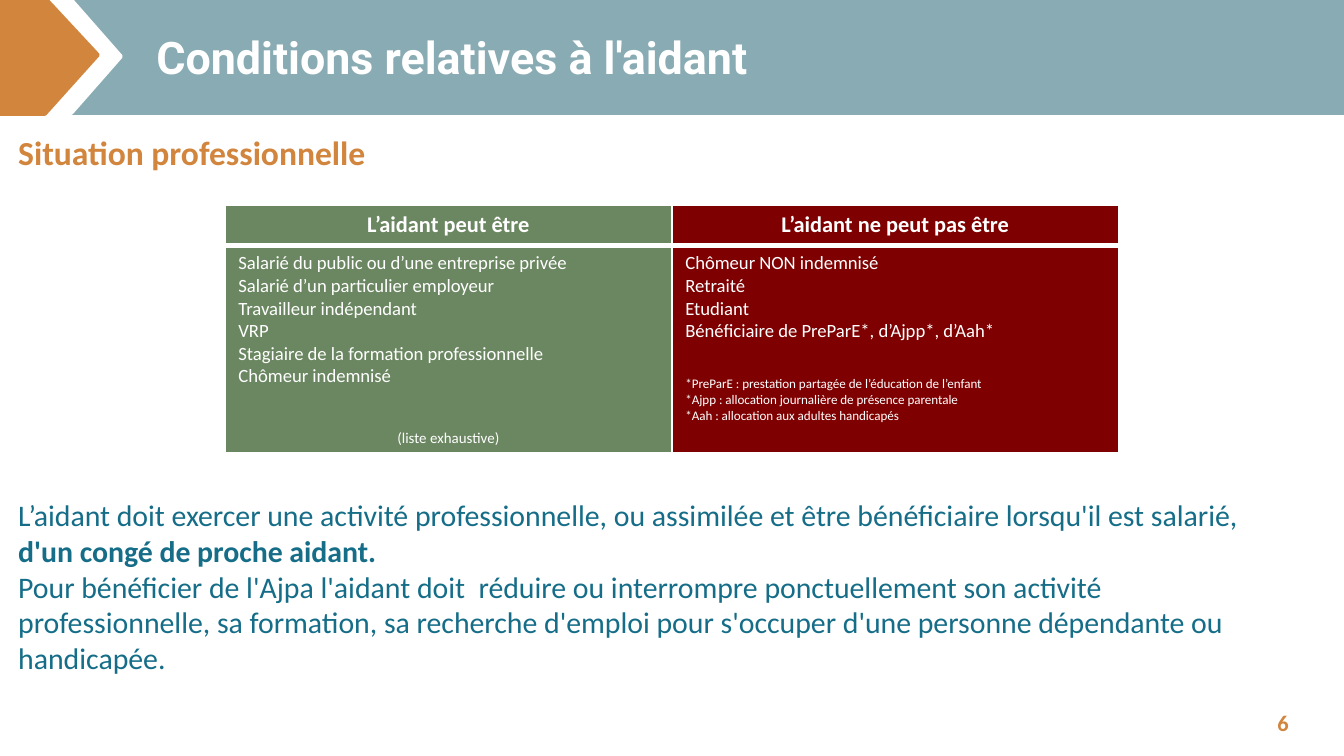
from lxml import etree
from pptx import Presentation
from pptx.dml.color import RGBColor
from pptx.enum.shapes import MSO_SHAPE
from pptx.enum.text import MSO_ANCHOR, PP_ALIGN
from pptx.oxml.ns import qn
from pptx.util import Emu, Pt

LEFT, CENTER, RIGHT = PP_ALIGN.LEFT, PP_ALIGN.CENTER, PP_ALIGN.RIGHT
TOP, MIDDLE = MSO_ANCHOR.TOP, MSO_ANCHOR.MIDDLE
RECTANGLE, CHEVRON = MSO_SHAPE.RECTANGLE, MSO_SHAPE.CHEVRON

COLORS = {"banner": "89ABB3", "orange": "D2853D", "teal": "156D88",
          "green": "6B8761", "red": "7E0000", "white": "FFFFFF"}
EMU_PER_PX = 914400 / 134.4
SLIDE_WIDTH, SLIDE_HEIGHT = 1344, 756
BANNER_HEIGHT = 113
ARROW_POINTS = [(-2, -2), (45, -2), (98, 55), (45, 114), (-2, 114)]


def line(text, size, color="white", bold=False, align=LEFT, before=0):
    """Describe a paragraph of one run."""
    return {"runs": [(text, bold)], "size": size, "color": color,
            "align": align, "before": before}


TITLE = line("Conditions relatives à l'aidant", 24, bold=True)
PAGE_NUMBER = line("6", 12, "orange", True, RIGHT)
BODY = [
    line("Situation professionnelle", 18, "orange", True),
    {"runs": [("L’aidant doit exercer une activité professionnelle, ou assimilée "
               "et être bénéficiaire lorsqu'il est salarié, ", False),
              ("d'un congé de proche aidant.", True)],
     "size": 16, "color": "teal", "align": LEFT, "before": 174},
    line("Pour bénéficier de l'Ajpa l'aidant doit  réduire ou interrompre "
         "ponctuellement son activité professionnelle, sa formation, sa recherche "
         "d'emploi pour s'occuper d'une personne dépendante ou handicapée.", 16, "teal"),
]

ELIGIBLE = ["Salarié du public ou d’une entreprise privée",
            "Salarié d’un particulier employeur", "Travailleur indépendant", "VRP",
            "Stagiaire de la formation professionnelle", "Chômeur indemnisé"]
INELIGIBLE = ["Chômeur NON indemnisé", "Retraité", "Etudiant",
              "Bénéficiaire de PreParE*, d’Ajpp*, d’Aah*"]
FOOTNOTES = ["*PreParE : prestation partagée de l’éducation de l’enfant",
             "*Ajpp : allocation journalière de présence parentale",
             "*Aah : allocation aux adultes handicapés"]
TABLE_COLUMNS = [
    ("green", "L’aidant peut être",
     [line(text, 10) for text in ELIGIBLE]
     + [line("(liste exhaustive)", 8, align=CENTER, before=22)]),
    ("red", "L’aidant ne peut pas être",
     [line(text, 10) for text in INELIGIBLE]
     + [line(text, 7, before=0 if index else 18)
        for index, text in enumerate(FOOTNOTES)]),
]
TABLE_LEFT, TABLE_TOP, COLUMN_WIDTH = 225, 205, 447
ROW_HEIGHTS = [39, 206]
# Border widths in points for each row: left, right, top, bottom
ROW_BORDERS = [(1, 1, 1, 3), (1, 1, 3, 1)]


def px(length):
    return Emu(round(length * EMU_PER_PX))


def rgb(name):
    return RGBColor.from_string(COLORS[name])


def write(frame, paragraphs, font="Calibri"):
    for index, content in enumerate(paragraphs):
        paragraph = frame.add_paragraph() if index else frame.paragraphs[0]
        paragraph.alignment = content["align"]
        if content["before"]:
            paragraph.space_before = Pt(content["before"])
        for text, bold in content["runs"]:
            run = paragraph.add_run()
            run.text = text
            run.font.name = font
            run.font.size = Pt(content["size"])
            run.font.bold = bold
            run.font.color.rgb = rgb(content["color"])


def add_text(slide, box, paragraphs, anchor=TOP, font="Calibri"):
    frame = slide.shapes.add_textbox(*map(px, box)).text_frame
    frame.word_wrap = True
    frame.vertical_anchor = anchor
    write(frame, paragraphs, font)


def paint(shape, color):
    shape.shadow.inherit = False
    shape.fill.solid()
    shape.fill.fore_color.rgb = rgb(color)
    shape.line.color.rgb = rgb(color)
    shape.line.width = Pt(2)


def add_banner(slide):
    banner = slide.shapes.add_shape(
        RECTANGLE, 0, 0, px(SLIDE_WIDTH), px(BANNER_HEIGHT))
    paint(banner, "banner")
    chevron = slide.shapes.add_shape(
        CHEVRON, px(47), 0, px(74), px(BANNER_HEIGHT))
    chevron.adjustments[0] = 0.67
    paint(chevron, "white")
    builder = slide.shapes.build_freeform(*ARROW_POINTS[0], scale=EMU_PER_PX)
    builder.add_line_segments(ARROW_POINTS[1:], close=True)
    paint(builder.convert_to_shape(), "orange")


def set_borders(cell, widths):
    properties = cell._tc.get_or_add_tcPr()
    for side, width in zip("LRTB", widths):
        border = etree.SubElement(properties, qn(f"a:ln{side}"), w=str(Pt(width)))
        fill = etree.SubElement(border, qn("a:solidFill"))
        etree.SubElement(fill, qn("a:srgbClr"), val=COLORS["white"])


def add_table(slide):
    table = slide.shapes.add_table(
        len(ROW_HEIGHTS), len(TABLE_COLUMNS), px(TABLE_LEFT), px(TABLE_TOP),
        px(COLUMN_WIDTH * len(TABLE_COLUMNS)), px(sum(ROW_HEIGHTS))).table
    for row, height in zip(table.rows, ROW_HEIGHTS):
        row.height = px(height)
    for column, (color, heading, entries) in enumerate(TABLE_COLUMNS):
        table.columns[column].width = px(COLUMN_WIDTH)
        header = [line(heading, 12, bold=True, align=CENTER)]
        for row, paragraphs in enumerate([header, entries]):
            cell = table.cell(row, column)
            set_borders(cell, ROW_BORDERS[row])
            cell.fill.solid()
            cell.fill.fore_color.rgb = rgb(color)
            write(cell.text_frame, paragraphs)


def main():
    presentation = Presentation()
    presentation.slide_width = px(SLIDE_WIDTH)
    presentation.slide_height = px(SLIDE_HEIGHT)
    slide = presentation.slides.add_slide(presentation.slide_layouts[6])
    add_banner(slide)
    add_text(slide, (143, 15, 1134, 84), [TITLE], MIDDLE, "Roboto")
    add_text(slide, (989, 702, 313, 41), [PAGE_NUMBER], MIDDLE)
    add_text(slide, (5, 125, 1298, 560), BODY)
    add_table(slide)
    presentation.save("out.pptx")


if __name__ == "__main__":
    main()
